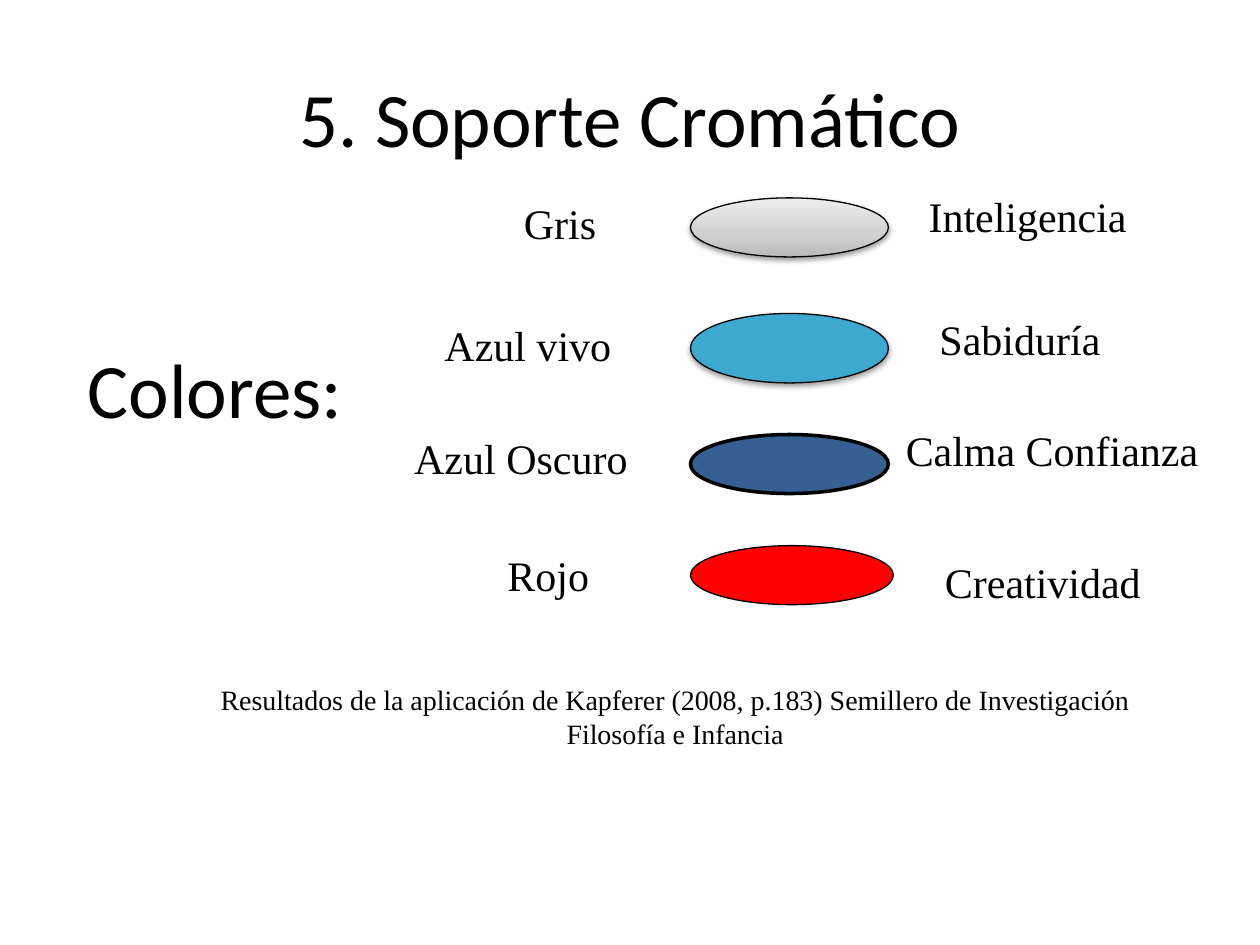
from copy import deepcopy

from lxml.etree import SubElement
from pptx import Presentation
from pptx.dml.color import RGBColor
from pptx.enum.shapes import MSO_SHAPE
from pptx.enum.text import MSO_ANCHOR, MSO_AUTO_SIZE, PP_ALIGN
from pptx.oxml.ns import qn
from pptx.util import Cm, Pt

TITLE = "5. Soporte Cromático"
HEADING = "Colores:"
SOURCE = ("Resultados de la aplicación de Kapferer (2008, p.183) "
          "Semillero de Investigación Filosofía e Infancia")
BLACK = "000000"
GREY_STOPS = [(0, "BABABA"), (0.35, "CFCFCF"), (1, "EDEDED")]
SWATCH_LEFT = 13.92
LABEL_HEIGHT = 1.27

SWATCHES = [
    {"top": 3.99, "size": (3.99, 1.19), "fill": GREY_STOPS, "line": 0.75, "shadow": True},
    {"top": 6.32, "size": (3.99, 1.4), "fill": "3DA9CF", "line": 0.75, "shadow": True},
    {"top": 8.76, "size": (3.99, 1.19), "fill": "366092", "line": 2, "shadow": False},
    {"top": 11, "size": (4.09, 1.19), "fill": "FF0000", "line": 0.75, "shadow": False},
]
LABELS = [
    ("Gris", 10.31, 3.86, 4.8),
    ("Azul vivo", 8.71, 6.32, 5.21),
    ("Azul Oscuro", 8.1, 8.59, 4.83),
    ("Rojo", 9.98, 10.95, 3),
    ("Inteligencia", 18.47, 3.71, 4.65),
    ("Sabiduría", 18.69, 6.2, 4.42),
    ("Calma Confianza", 18.01, 8.43, 6.48),
    ("Creatividad", 18.8, 11.1, 4.6),
]


def color(value):
    return RGBColor.from_string(value)


def write(frame, text, size, font, align):
    frame.text = text
    frame.word_wrap = True
    para = frame.paragraphs[0]
    para.alignment = align
    for span in para.runs:
        span.font.size = Pt(size)
        span.font.name = font
        span.font.color.rgb = color(BLACK)


def add_text(page, text, left, top, width, height, size=24,
             font="Times New Roman", align=PP_ALIGN.LEFT):
    box = page.shapes.add_textbox(Cm(left), Cm(top), Cm(width), Cm(height))
    write(box.text_frame, text, size, font, align)
    box.text_frame.auto_size = MSO_AUTO_SIZE.SHAPE_TO_FIT_TEXT


def fill_gradient(shape, stops):
    shape.fill.gradient()
    shape.fill.gradient_angle = 90
    stop_list = shape.fill._xPr.find(qn("a:gradFill")).find(qn("a:gsLst"))
    stop_list.insert(1, deepcopy(stop_list[0]))
    for stop, (position, value) in zip(shape.fill.gradient_stops, stops):
        stop.position = position
        stop.color.rgb = color(value)


def add_shadow(shape):
    effects = shape._element.spPr.find(qn("a:effectLst"))
    shadow = SubElement(effects, qn("a:outerShdw"), blurRad="40000", dist="20000",
                        dir="5400000", rotWithShape="0")
    tone = SubElement(shadow, qn("a:srgbClr"), val=BLACK)
    SubElement(tone, qn("a:alpha"), val="38000")


def add_swatch(page, swatch):
    width, height = swatch["size"]
    oval = page.shapes.add_shape(MSO_SHAPE.OVAL, Cm(SWATCH_LEFT), Cm(swatch["top"]),
                                 Cm(width), Cm(height))
    oval.shadow.inherit = False
    if isinstance(swatch["fill"], str):
        oval.fill.solid()
        oval.fill.fore_color.rgb = color(swatch["fill"])
    else:
        fill_gradient(oval, swatch["fill"])
    oval.line.color.rgb = color(BLACK)
    oval.line.width = Pt(swatch["line"])
    if swatch["shadow"]:
        add_shadow(oval)


def main():
    """Build the slide that pairs each brand colour with its meaning."""
    deck = Presentation()
    deck.slide_width, deck.slide_height = Cm(25.4), Cm(19.05)
    page = deck.slides.add_slide(deck.slide_layouts[5])
    title = page.shapes.title
    title.left, title.top, title.width, title.height = Cm(1.27), Cm(0.76), Cm(22.86), Cm(3.18)
    write(title.text_frame, TITLE, 44, "Calibri", PP_ALIGN.CENTER)
    title.text_frame.vertical_anchor = MSO_ANCHOR.MIDDLE
    for swatch in SWATCHES:
        add_swatch(page, swatch)
    add_text(page, HEADING, 1.52, 6.76, 5.79, 2.13, 44, "Calibri")
    for text, left, top, width in LABELS:
        add_text(page, text, left, top, width, LABEL_HEIGHT)
    add_text(page, SOURCE, 4.11, 13.64, 19, 1.63, 16, align=PP_ALIGN.CENTER)
    deck.save("out.pptx")


if __name__ == "__main__":
    main()
